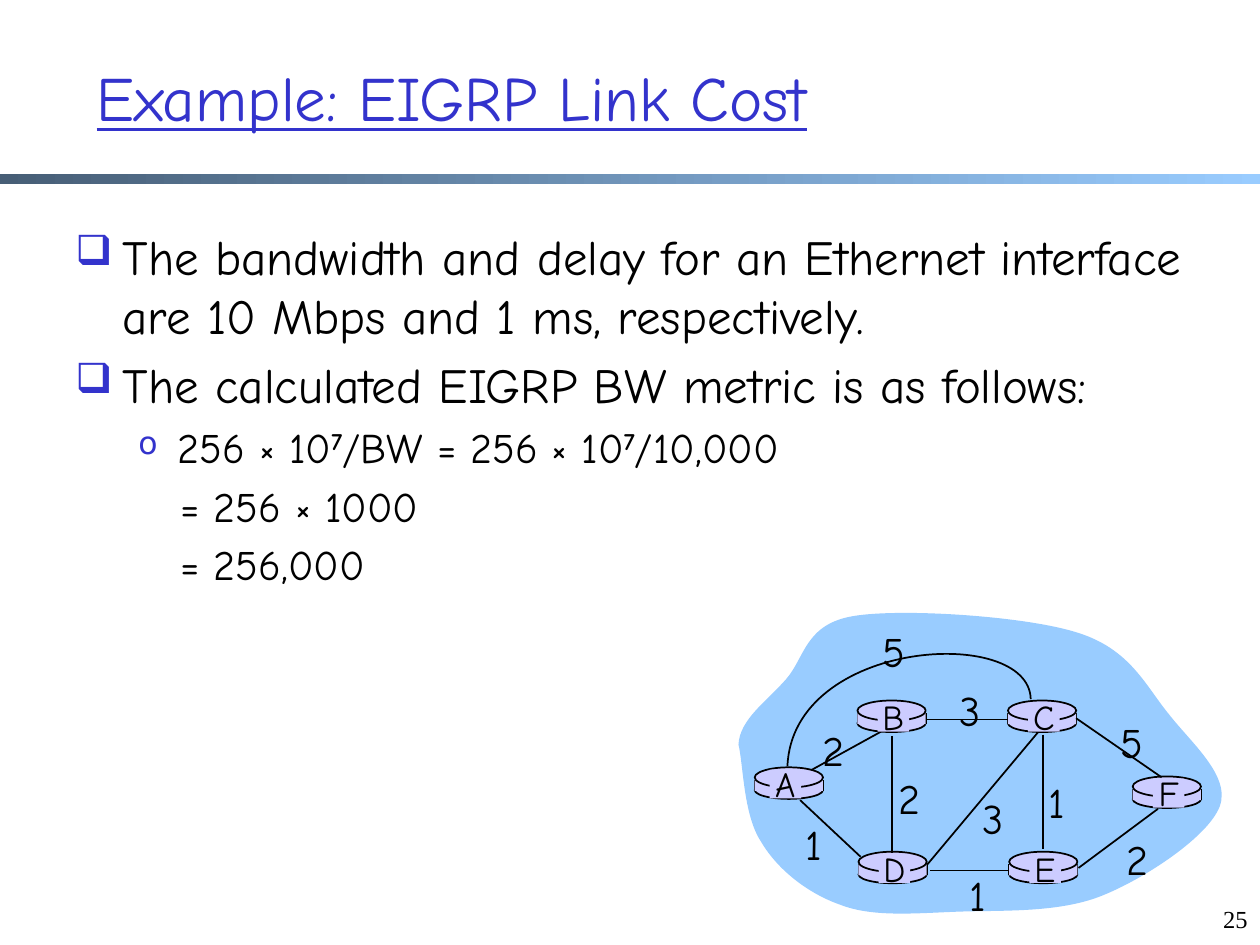
from lxml import etree
from pptx import Presentation
from pptx.dml.color import RGBColor
from pptx.enum.shapes import MSO_CONNECTOR, MSO_SHAPE
from pptx.enum.text import MSO_ANCHOR, MSO_AUTO_SIZE, PP_ALIGN
from pptx.oxml.ns import qn
from pptx.util import Pt

RECT, OVAL = MSO_SHAPE.RECTANGLE, MSO_SHAPE.OVAL
STRAIGHT = MSO_CONNECTOR.STRAIGHT
LEFT, CENTER, RIGHT = PP_ALIGN.LEFT, PP_ALIGN.CENTER, PP_ALIGN.RIGHT
BLUE = RGBColor(0x33, 0x33, 0xCC)
SKY = RGBColor(0x99, 0xCC, 0xFF)
SLATE = RGBColor(0x47, 0x5E, 0x76)
LILAC = RGBColor(0xCC, 0xCC, 0xFF)
BLACK = RGBColor(0, 0, 0)
FONT, NUMBER_FONT = "Comic Neue", "Times New Roman"

# Content: all positions in points
TITLE = "Example: EIGRP Link Cost"
PAGE = "25"

# Style: size, left margin, first-line indent, bullet, bullet size in percent
STYLES = {
    "point": (28, 27, -27, "❑", 85),
    "formula": (24, 58.5, -22.5, "o", 75),
    "step": (24, 60, 0, None, None),
}
# Text between ^ marks is superscript
BODY = [
    ("point", "The bandwidth and delay for an Ethernet interface "
              "are 10 Mbps and 1 ms, respectively."),
    ("point", "The calculated EIGRP BW metric is as follows:"),
    ("formula", "256 × 10^7^/BW = 256 × 10^7^/10,000"),
    ("step", "= 256 × 1000"),
    ("step", "= 256,000"),
]

# Start point, then two control points and an end point for each curve
CLOUD = [
    (422, 425.5),
    (422.6, 411), (438.5, 400.5), (449.3, 388),
    (460, 375.8), (460, 356.5), (488, 352),
    (515.5, 347.5), (586, 352), (615.6, 361.5),
    (645.8, 370.8), (654.5, 391.7), (668, 408.2),
    (681, 424.8), (703.4, 443.5), (697, 460.8),
    (690.5, 478), (654.5, 502), (629.3, 512),
    (604, 522), (571, 520), (545.8, 521),
    (521.3, 522), (498.2, 524), (480.2, 517),
    (461.5, 510.5), (444.2, 496.8), (434.9, 481),
    (424.8, 465.8), (424.8, 437), (422, 425.5),
]
ARC = [(589, 399.6), (588.2, 357), (453, 365), (450, 437.8)]

# Top left corner of each router, and how far right its name is centred
ROUTERS = {"A": (431.3, 438.5, 17.5), "B": (490, 400.3, 20.5),
           "C": (576, 400.3, 20.5), "D": (490.6, 486.7, 20.5),
           "E": (576.7, 486.7, 20.5), "F": (647.3, 443.7, 20.5)}
LINKS = [
    (463.7, 440, 506.9, 416.2),    # A-B
    (596.2, 419.8, 596.2, 485.3),  # C-E
    (509.8, 420.5, 509.8, 487.4),  # B-D
    (530, 493.9, 593.3, 418.3),    # D-C
    (616.3, 496, 661.7, 462.2),    # E-F
    (531.4, 497.5, 576.7, 497.5),  # D-E
    (457.2, 457.2, 491.8, 489.6),  # A-D
    (530, 411.1, 576, 411.1),      # B-C
    (614.9, 410.4, 663.8, 444.2),  # C-F
]
# Link cost, centre x, top y
COSTS = [("2", 475.5, 410.4), ("2", 518.8, 437.8), ("1", 464.8, 464.4),
         ("3", 567, 449.3), ("1", 559, 493.2), ("1", 604, 440),
         ("2", 649, 473), ("5", 645.5, 406), ("3", 554, 387.4),
         ("5", 510, 354)]

prs = Presentation()
prs.slide_width, prs.slide_height = Pt(720), Pt(540)
slide = prs.slides.add_slide(prs.slide_layouts[5])
shapes = slide.shapes


def style_font(font, size, color=BLACK, name=FONT):
    font.name, font.size, font.color.rgb = name, Pt(size), color


def paint(shape, fill=None, outlined=False):
    shape.shadow.inherit = False
    if fill is None:
        shape.fill.background()
    else:
        shape.fill.solid()
        shape.fill.fore_color.rgb = fill
    if outlined:
        shape.line.color.rgb, shape.line.width = BLACK, Pt(1)
    else:
        shape.line.fill.background()


def add_block(kind, x, y, w, h, outlined=False):
    paint(shapes.add_shape(kind, Pt(x), Pt(y), Pt(w), Pt(h)), LILAC, outlined)


def add_line(x1, y1, x2, y2):
    line = shapes.add_connector(STRAIGHT, Pt(x1), Pt(y1), Pt(x2), Pt(y2))
    line.line.color.rgb, line.line.width = BLACK, Pt(1)
    etree.SubElement(line._element.spPr, qn("a:effectLst"))


def add_curve(points, closed):
    corners = [(Pt(x), Pt(y)) for x, y in points]
    builder = shapes.build_freeform(*corners[0])
    builder.add_line_segments(corners[1:], close=closed)
    curve = builder.convert_to_shape()
    # Merge every three straight segments into one cubic curve
    segments = list(curve._element.iter(qn("a:lnTo")))
    for first in range(0, len(segments), 3):
        start, *others = segments[first:first + 3]
        start.tag = qn("a:cubicBezTo")
        for other in others:
            start.append(other[0])
            other.getparent().remove(other)
    return curve


def add_label(text, x, y, w, h, size, align=CENTER, name=FONT, wrap=False):
    frame = shapes.add_textbox(Pt(x), Pt(y), Pt(w), Pt(h)).text_frame
    frame.word_wrap = wrap
    paragraph = frame.paragraphs[0]
    paragraph.text, paragraph.alignment = text, align
    style_font(paragraph.font, size, name=name)


def set_bullet(paragraph, margin, indent, mark, percent):
    props = paragraph._p.get_or_add_pPr()
    props.set("marL", str(Pt(margin)))
    props.set("indent", str(Pt(indent)))
    if mark is None:
        etree.SubElement(props, qn("a:buNone"))
        return
    color = etree.SubElement(props, qn("a:buClr"))
    etree.SubElement(color, qn("a:srgbClr")).set("val", str(BLUE))
    etree.SubElement(props, qn("a:buSzPct")).set("val", str(percent * 1000))
    etree.SubElement(props, qn("a:buChar")).set("char", mark)


# Gradient rule below the title
rule = shapes.add_shape(RECT, 0, Pt(99.5), Pt(720), Pt(5.5))
paint(rule, SKY)
rule.fill.gradient()
rule.fill.gradient_angle = 0
for stop, color, position in zip(rule.fill.gradient_stops, (SLATE, SKY), (0, 1)):
    stop.color.rgb, stop.position = color, position

# Title
title = shapes.title
title.left, title.top, title.width, title.height = Pt(48), Pt(28), Pt(630), Pt(54)
title.text_frame.text = TITLE
title.text_frame.auto_size = MSO_AUTO_SIZE.NONE
title.text_frame.vertical_anchor = MSO_ANCHOR.MIDDLE
heading = title.text_frame.paragraphs[0]
heading.alignment = LEFT
style_font(heading.font, 36, BLUE)
heading.font.underline = True

# Body text
body = shapes.add_textbox(Pt(36), Pt(126), Pt(654), Pt(372)).text_frame
body.word_wrap = True
for index, (style, text) in enumerate(BODY):
    paragraph = body.add_paragraph() if index else body.paragraphs[0]
    size, *bullet = STYLES[style]
    paragraph.space_before = Pt(size * 0.2)
    set_bullet(paragraph, *bullet)
    style_font(paragraph.font, size)
    for part, piece in enumerate(text.split("^")):
        run = paragraph.add_run()
        run.text = piece
        if part % 2:
            run.font.bold = True
            run._r.get_or_add_rPr().set("baseline", "30000")

# Network: cloud, routers, links, then names and costs on top
paint(add_curve(CLOUD, closed=True), SKY)
for x, y, _ in ROUTERS.values():
    add_block(OVAL, x, y + 8, 39, 10, outlined=True)
    for side in (x, x + 39):
        add_line(side, y + 7.2, side, y + 13.5)
    add_block(RECT, x, y + 7.2, 39, 6.3)
    add_block(OVAL, x, y, 39, 11.5, outlined=True)
for link in LINKS:
    add_line(*link)
paint(add_curve(ARC, closed=False), outlined=True)
for name, (x, y, shift) in ROUTERS.items():
    add_block(RECT, x + shift - 9, y + 1.3, 18, 16.5)
    add_label(name, x + shift - 14, y - 6.2, 28, 31, 20)
for cost, x, y in COSTS:
    add_label(cost, x - 12.5, y, 25, 36, 24)

# Slide number
add_label(PAGE, 684, 513, 36, 27, 14, RIGHT, NUMBER_FONT, wrap=True)

prs.save("out.pptx")
